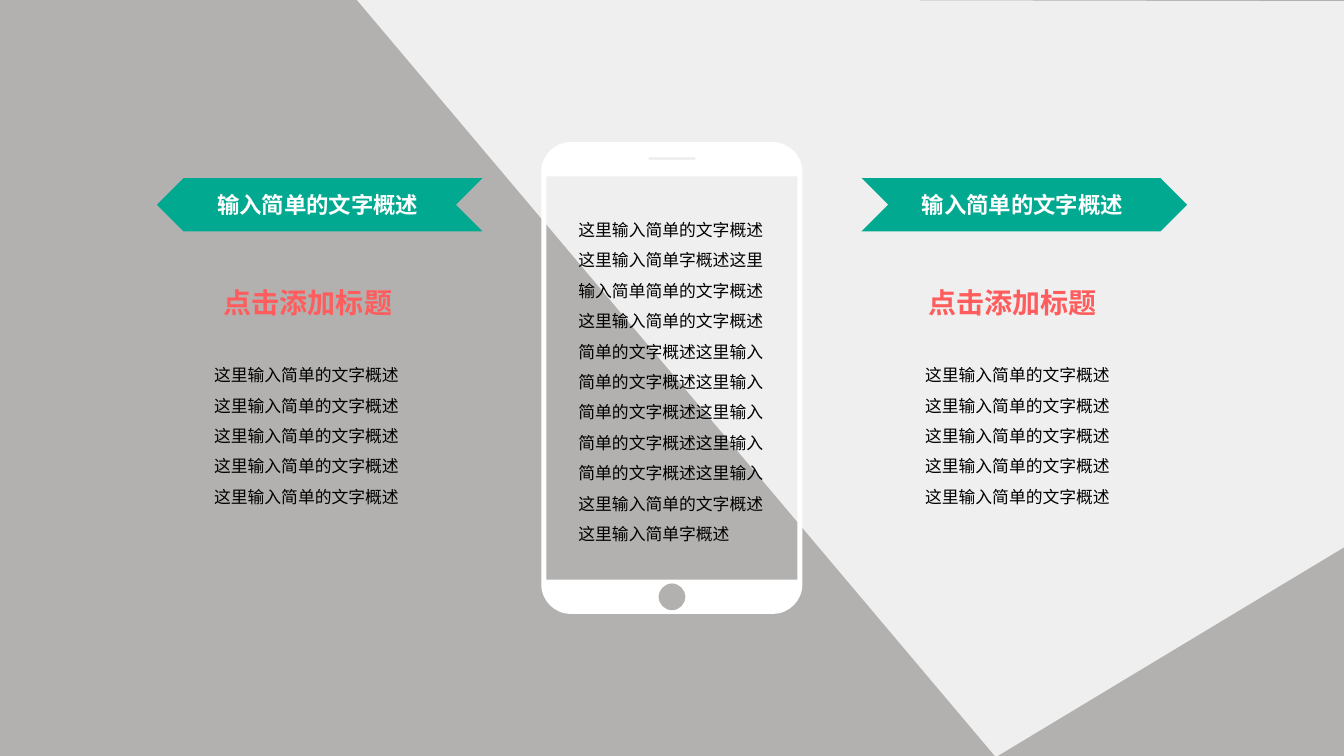
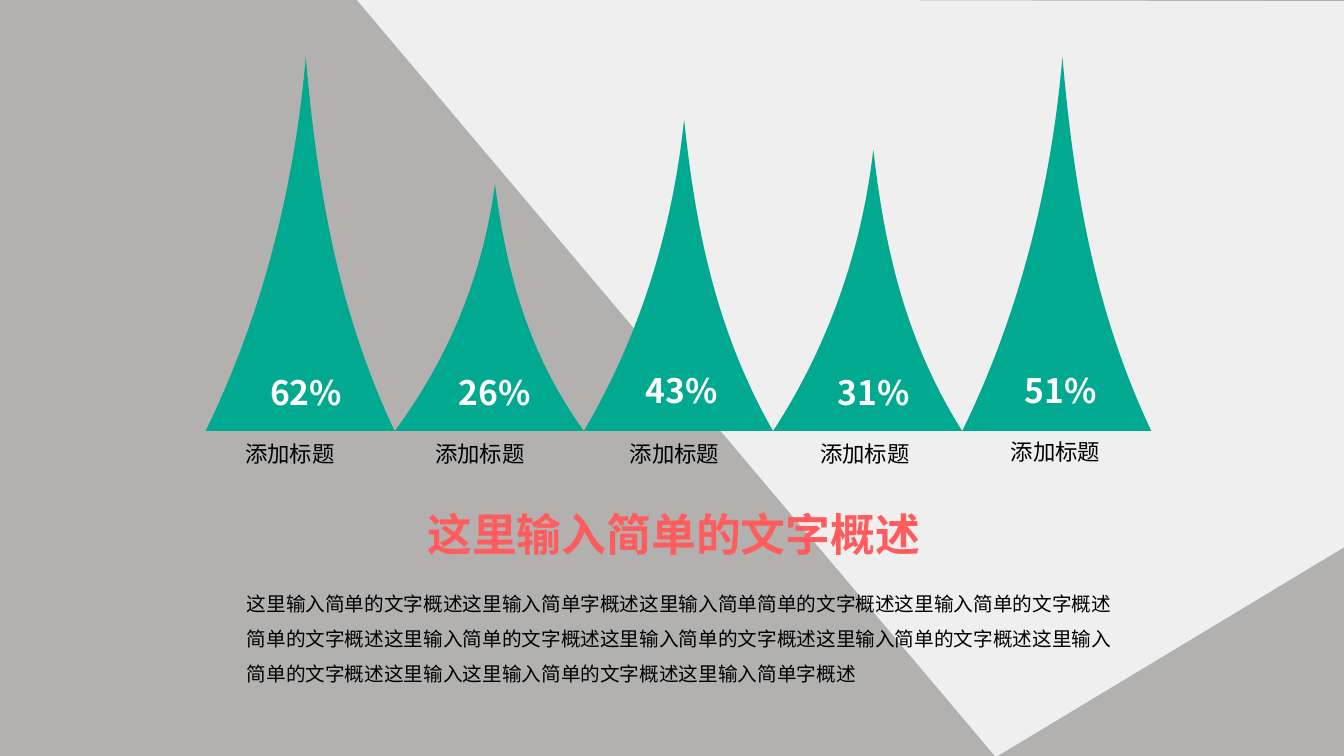
"""Builds a two-slide deck: a phone with two banners, and a row of percentage spires."""
from dataclasses import dataclass

from lxml import etree
from pptx import Presentation
from pptx.dml.color import RGBColor
from pptx.enum.shapes import MSO_SHAPE
from pptx.enum.text import MSO_AUTO_SIZE, PP_ALIGN
from pptx.oxml.ns import qn
from pptx.util import Inches, Pt

CHEVRON = MSO_SHAPE.CHEVRON
GROW = MSO_AUTO_SIZE.SHAPE_TO_FIT_TEXT
LEFT, CENTER, RIGHT = PP_ALIGN.LEFT, PP_ALIGN.CENTER, PP_ALIGN.RIGHT
WIDTH, HEIGHT = Inches(13.33), Inches(7.5)
COLS, ROWS = 160, 90
ARC = 0.45
SEGMENTS = {"M": "a:moveTo", "L": "a:lnTo", "C": "a:cubicBezTo", "Z": "a:close"}


@dataclass(frozen=True)
class Theme:
    ground: str = "B2B1AF"
    pale: str = "EFEFEF"
    white: str = "FFFFFF"
    ink: str = "000000"
    accent: str = "01A991"
    title: str = "FF5D5D"
    font: str = "Noto Sans CJK SC"
    heading_font: str = "Roboto"
    small: int = 12
    body: int = 14
    label: int = 16
    heading: int = 20
    number: int = 24
    headline: int = 32
    tight: float = 1.2
    loose: float = 1.81


@dataclass(frozen=True)
class Spire:
    share: str
    height: float
    share_left: float
    share_top: float
    label_left: float
    label_top: float = 51.84


T = Theme()
PHRASE = "输入简单的文字概述"
LINE = "这里" + PHRASE
PASSAGE = (
    "这里输入简单的文字概述这里输入简单字概述这里输入简单简单的文字概述"
    "这里输入简单的文字概述简单的文字概述这里输入简单的文字概述"
    "这里输入简单的文字概述这里输入简单的文字概述这里输入简单的文字概述"
    "这里输入这里输入简单的文字概述这里输入简单字概述"
)
SPIRES = [
    Spire("62%", 44.52, 30.98, 43.68, 28),
    Spire("26%", 29.4, 53.4, 43.68, 50.64),
    Spire("43%", 37.08, 75.72, 43.44, 73.8),
    Spire("31%", 33.48, 98.52, 43.68, 96.48),
    Spire("51%", 44.52, 120.84, 43.44, 119.16, 51.6),
]


def x_at(col):
    return round(WIDTH * col / COLS)


def y_at(row):
    return round(HEIGHT * row / ROWS)


def box(left, top, width, height):
    return x_at(left), y_at(top), x_at(width), y_at(height)


def paint(sp, color):
    sp.shadow.inherit = False
    sp.fill.solid()
    sp.fill.fore_color.rgb = RGBColor.from_string(color)
    sp.line.fill.background()
    return sp


def add_outline(slide, segments, color):
    """Draws move, line, curve and close segments as one shape."""
    ends = [(x_at(s[-1][0]), y_at(s[-1][1])) for s in segments if len(s) > 1]
    left, top = (min(axis) for axis in zip(*ends))
    builder = slide.shapes.build_freeform(*ends[0])
    builder.add_line_segments(ends[1:])
    sp = paint(builder.convert_to_shape(), color)
    outline = sp.element.find(".//" + qn("a:path"))
    for child in list(outline):
        outline.remove(child)
    for kind, *points in segments:
        segment = etree.SubElement(outline, qn(SEGMENTS[kind]))
        for x, y in points:
            pt = etree.SubElement(segment, qn("a:pt"))
            pt.set("x", str(x_at(x) - left))
            pt.set("y", str(y_at(y) - top))
    return sp


def add_text(slide, text, area, *, size, color=T.ink, font=T.font, bold=False,
             align=LEFT, leading=T.tight, wrap=True):
    tf = slide.shapes.add_textbox(*box(*area)).text_frame
    tf.word_wrap = wrap
    tf.auto_size = GROW
    for i, line in enumerate(text.split("\n")):
        p = tf.add_paragraph() if i else tf.paragraphs[0]
        p.alignment = align
        p.line_spacing = Pt(size * leading)
        r = p.add_run()
        r.text = line
        r.font.size = Pt(size)
        r.font.bold = bold
        r.font.name = font
        r.font.color.rgb = RGBColor.from_string(color)
        ea = etree.SubElement(r.font._element, qn("a:ea"))
        ea.set("typeface", T.font)


def polygon(first, *others):
    return [("M", first), *(("L", point) for point in others), ("Z",)]


def rounded(left, top, width, height, radius):
    """Returns the segments of a rectangle with round corners."""
    right, bottom = left + width, top + height
    near, far = radius * ARC, radius
    return [
        ("M", (left + far, top)), ("L", (right - far, top)),
        ("C", (right - near, top), (right, top + near), (right, top + far)),
        ("L", (right, bottom - far)),
        ("C", (right, bottom - near), (right - near, bottom), (right - far, bottom)),
        ("L", (left + far, bottom)),
        ("C", (left + near, bottom), (left, bottom - near), (left, bottom - far)),
        ("L", (left, top + far)),
        ("C", (left, top + near), (left + near, top), (left + far, top)),
        ("Z",),
    ]


def add_spire(slide, left, base, width, height):
    def at(across, up):
        return left + width * across, base - height * up
    add_outline(slide, [
        ("M", at(0, 0)),
        ("C", at(0.3, 0.31), at(0.47, 0.65), at(0.53, 1)),
        ("C", at(0.59, 0.65), at(0.7, 0.32), at(1, 0)),
        ("Z",),
    ], T.accent)


def add_phone(slide):
    body = rounded(64.44, 16.92, 31.08, 56.16, 3.5)
    screen = polygon((65.04, 21), (65.04, 69), (94.92, 69), (94.92, 21))
    speaker = rounded(77.2, 18.72, 5.6, 0.36, 0.12)
    button = rounded(78.4, 69.46, 3.2, 3.2, 1.6)
    add_outline(slide, button + screen + speaker + body, T.white)
    add_text(slide, PASSAGE, (67.68, 24.36, 24.72, 41.16), size=T.small, leading=T.loose)


def add_banner(slide, left, flip):
    sp = paint(slide.shapes.add_shape(CHEVRON, *box(left, 21.2, 38.76, 6.36)), T.accent)
    if flip:
        sp.element.spPr.find(qn("a:xfrm")).set("flipH", "1")
    add_text(slide, PHRASE, (left + 6, 22.2, 26.64, 4.44),
             size=T.label, color=T.white, bold=True, wrap=False)


def add_panel(slide, left, list_left, flip=False):
    """Adds a banner with a heading and a list below it."""
    add_banner(slide, left, flip)
    add_text(slide, "点击添加标题", (left + 6.7, 31.32, 22.56, 6.6), size=T.heading,
             color=T.title, font=T.heading_font, bold=True, align=CENTER, leading=T.loose)
    add_text(slide, "\n".join([LINE] * 5), (list_left, 41.64, 24.48, 19.44),
             size=T.small, align=RIGHT, leading=T.loose)


def style_layout(layout, slide):
    """Gives the layout its ground colour and pale backdrop."""
    layout.background.fill.solid()
    layout.background.fill.fore_color.rgb = RGBColor.from_string(T.ground)
    backdrop = polygon((42.4, -0.12), (160.2, 0.14), (160, 65.16), (118.56, 90.12))
    layout.shapes.element.append(add_outline(slide, backdrop, T.pale).element)


def build_phone_slide(slide):
    add_phone(slide)
    add_panel(slide, 102.57, 108.84)
    add_panel(slide, 18.69, 24.2, flip=True)


def build_spire_slide(slide):
    for i, spire in enumerate(SPIRES):
        add_spire(slide, 24.48 + 22.52 * i, 51.3, 22.5, spire.height)
        add_text(slide, spire.share, (spire.share_left, spire.share_top, 14.16, 6),
                 size=T.number, color=T.white, bold=True)
        add_text(slide, "添加标题", (spire.label_left, spire.label_top, 15.12, 4.44),
                 size=T.label)
    add_text(slide, LINE, (49.68, 59.76, 61.68, 7.68),
             size=T.headline, color=T.title, bold=True, wrap=False)
    add_text(slide, PASSAGE, (28.2, 68.4, 105.6, 13.92), size=T.body, leading=T.loose)


def main():
    prs = Presentation()
    prs.slide_width, prs.slide_height = WIDTH, HEIGHT
    layout = prs.slide_layouts[6]
    phone_slide, spire_slide = (prs.slides.add_slide(layout) for _ in range(2))
    style_layout(layout, phone_slide)
    build_phone_slide(phone_slide)
    build_spire_slide(spire_slide)
    prs.save("out.pptx")


if __name__ == "__main__":
    main()
